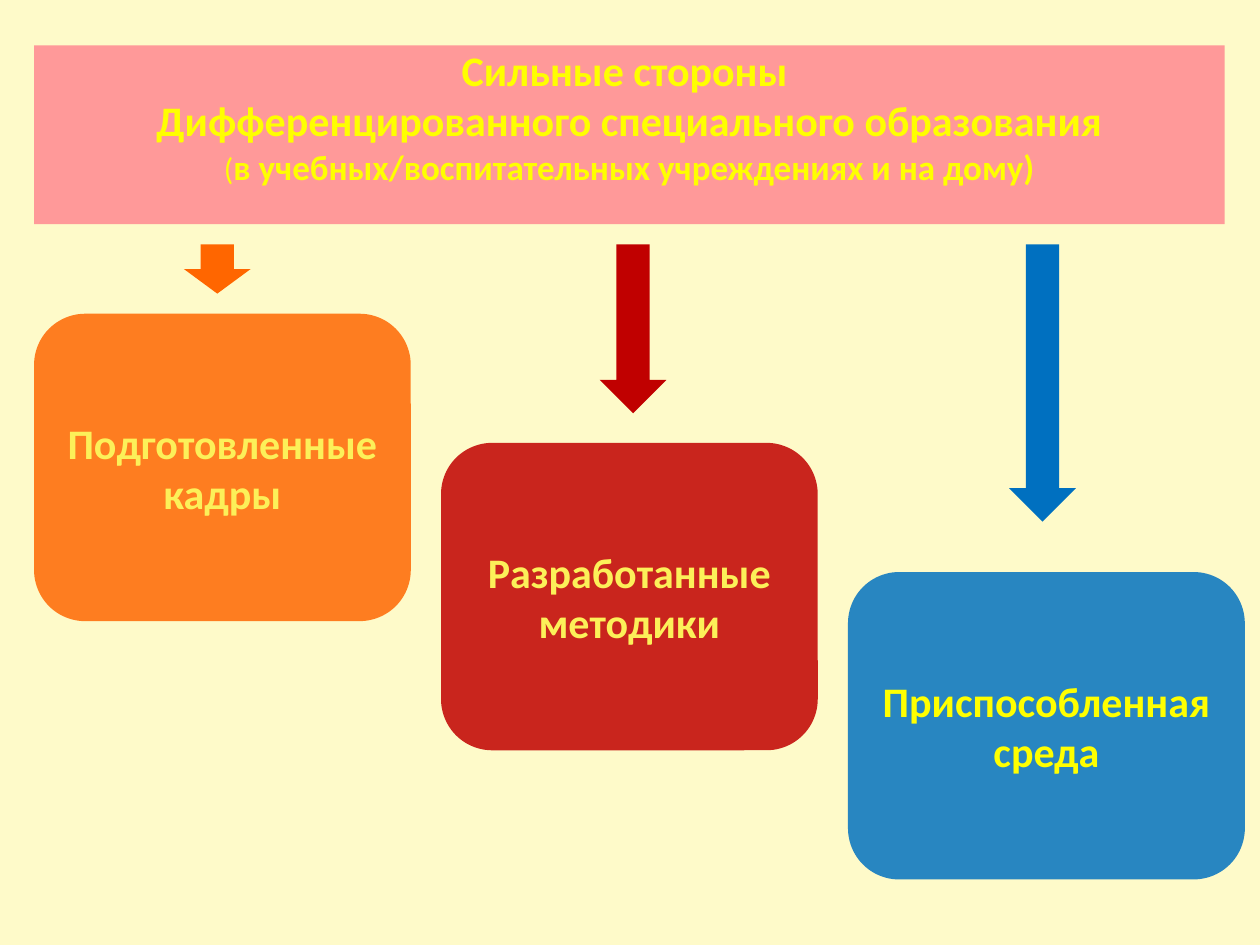
from dataclasses import dataclass

from lxml.etree import SubElement
from pptx import Presentation
from pptx.dml.color import RGBColor
from pptx.enum.shapes import MSO_SHAPE
from pptx.enum.text import MSO_ANCHOR, MSO_AUTO_SIZE, PP_ALIGN
from pptx.oxml import parse_xml
from pptx.oxml.ns import nsdecls, qn
from pptx.util import Inches, Pt


@dataclass(frozen=True)
class Theme:
    font: str = "Calibri"
    heading: int = 24
    subheading: int = 20
    bracket: int = 18
    background: str = "FEFAC9"
    banner: str = "FF9999"
    orange: str = "FF6600"
    red: str = "C00000"
    blue: str = "0070C0"
    yellow: str = "FFFF00"
    pale_yellow: str = "FCF059"


THEME = Theme()

# Staircase grid, in inches
LEFT, COLUMN_STEP = 0.27, 3.23
FIRST_ROW, ROW_STEP = 2.49, 1.025
CARD_HEIGHT = 2.44
ARROW_TOP, ARROW_WIDTH = 1.94, 0.53

# Label, fill, opacity %, text colour, card width, arrow offset in column, arrow length
STRENGTHS = [
    ("Подготовленные кадры", THEME.orange, 84, THEME.pale_yellow, 2.99, 1.19, 0.39),
    ("Разработанные методики", THEME.red, 85, THEME.pale_yellow, 2.99, 1.26, 1.34),
    ("Приспособленная среда", THEME.blue, 84, THEME.yellow, 3.15, 1.28, 2.2),
]


def paint(shape, color, opacity=100):
    shape.fill.solid()
    shape.fill.fore_color.rgb = RGBColor.from_string(color)
    shape.line.fill.background()
    if opacity < 100:
        solid = shape.fill._xPr.find(qn("a:solidFill"))
        SubElement(solid[0], qn("a:alpha"), val=str(opacity * 1000))


def style(font, size, color, bold=True):
    font.name = THEME.font
    font.size = Pt(size)
    font.bold = bold
    font.color.rgb = RGBColor.from_string(color)


def add_block(slide, kind, box, color, opacity=100):
    block = slide.shapes.add_shape(kind, *map(Inches, box))
    block.shadow.inherit = False
    paint(block, color, opacity)
    return block


def fill_banner(slide, box):
    banner = slide.shapes.title
    banner.left, banner.top, banner.width, banner.height = map(Inches, box)
    # Rounded outline for the title placeholder
    banner._element.spPr.find(qn("a:xfrm")).addnext(parse_xml(
        f'<a:prstGeom {nsdecls("a")} prst="roundRect"><a:avLst/></a:prstGeom>'))
    paint(banner, THEME.banner)

    frame = banner.text_frame
    frame.word_wrap = True
    frame.auto_size = MSO_AUTO_SIZE.NONE
    frame.vertical_anchor = MSO_ANCHOR.MIDDLE
    frame.margin_top, frame.margin_bottom = 0, Inches(0.3)

    heading = frame.paragraphs[0]
    heading.text = "Сильные стороны "
    heading.alignment = PP_ALIGN.CENTER
    style(heading.font, THEME.heading, THEME.yellow)

    subject = frame.add_paragraph()
    subject.alignment = PP_ALIGN.CENTER
    topic = subject.add_run()
    topic.text = "Дифференцированного специального образования"
    style(topic.font, THEME.heading, THEME.yellow)
    subject.add_line_break()
    bracket = subject.add_run()
    bracket.text = "("
    style(bracket.font, THEME.bracket, THEME.yellow, bold=False)
    setting = subject.add_run()
    setting.text = "в учебных/воспитательных учреждениях и на дому)"
    style(setting.font, THEME.subheading, THEME.yellow)


def add_card(slide, box, label, color, opacity, text_color):
    card = add_block(slide, MSO_SHAPE.ROUNDED_RECTANGLE, box, color, opacity)
    frame = card.text_frame
    frame.word_wrap = True
    frame.vertical_anchor = MSO_ANCHOR.MIDDLE
    caption = frame.paragraphs[0]
    caption.text = label
    caption.alignment = PP_ALIGN.CENTER
    style(caption.font, THEME.heading, text_color)


def add_strengths(slide, left, top):
    for step, (label, color, opacity, text_color, width, offset, length) in enumerate(STRENGTHS):
        column = left + step * COLUMN_STEP
        row = top + step * ROW_STEP
        add_block(slide, MSO_SHAPE.DOWN_ARROW,
                  (column + offset, ARROW_TOP, ARROW_WIDTH, length), color)
        add_card(slide, (column, row, width, CARD_HEIGHT),
                 label, color, opacity, text_color)


def main():
    deck = Presentation()
    deck.slide_width, deck.slide_height = Inches(10), Inches(7.5)
    slide = deck.slides.add_slide(deck.slide_layouts[5])
    slide.background.fill.solid()
    slide.background.fill.fore_color.rgb = RGBColor.from_string(THEME.background)
    fill_banner(slide, (LEFT, 0.36, 9.45, 1.42))
    add_strengths(slide, LEFT, FIRST_ROW)
    deck.save("out.pptx")


if __name__ == "__main__":
    main()
